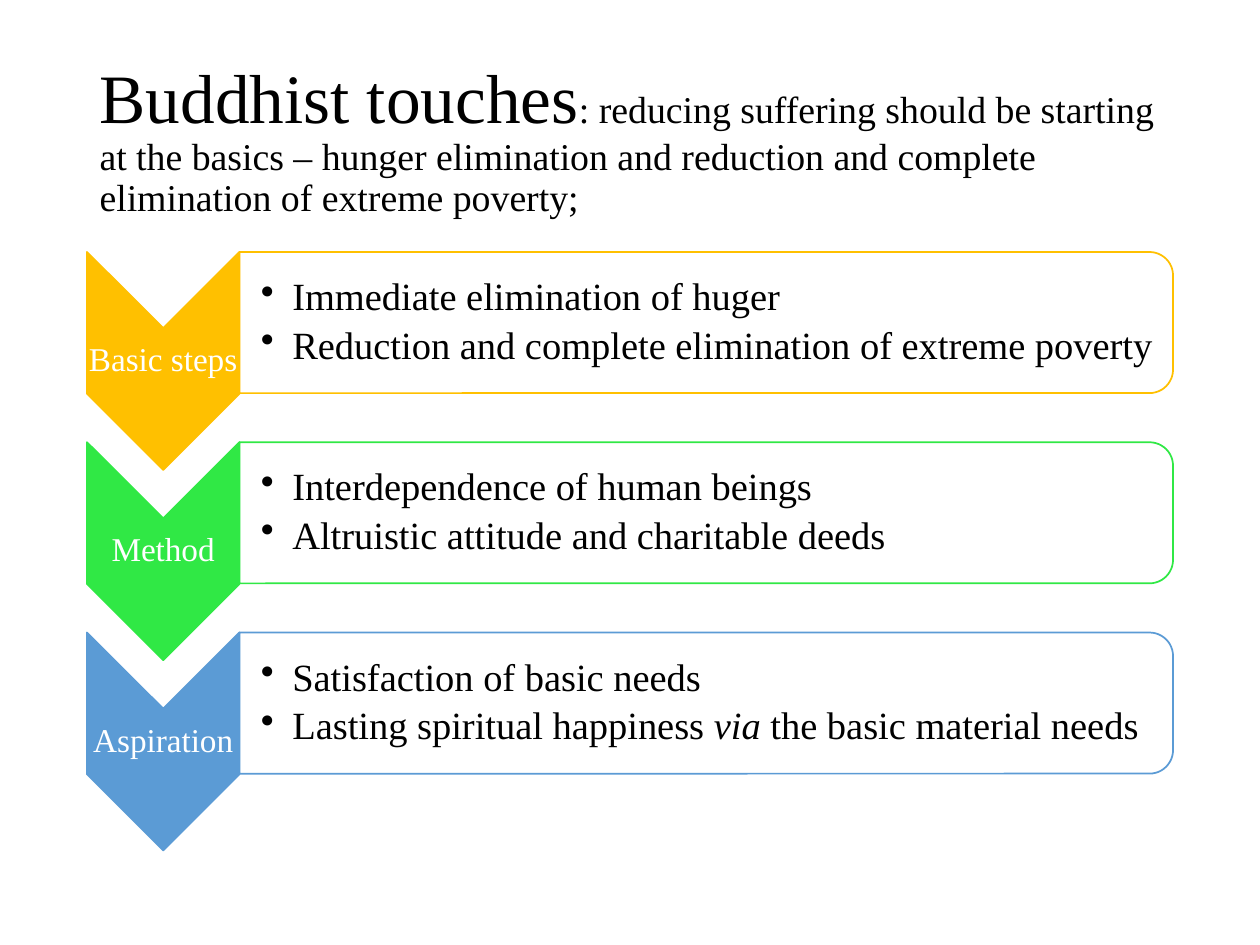
from lxml.etree import SubElement
from pptx import Presentation
from pptx.dml.color import RGBColor
from pptx.enum.shapes import MSO_SHAPE as Shape
from pptx.enum.text import MSO_ANCHOR as Anchor, MSO_AUTO_SIZE as AutoSize, PP_ALIGN as Align
from pptx.oxml.ns import qn
from pptx.util import Inches, Pt

WIDTH, HEIGHT = 10, 7.5
LEFT, TOP, ROW_WIDTH, ROW_PITCH = 0.69, 2.0, 8.62, 1.51
CHEVRON_WIDTH, CHEVRON_HEIGHT, PANEL_HEIGHT = 1.21, 1.73, 1.12
TITLE = [("Buddhist touches", {"size": Pt(39.6)}),
         (": reducing suffering should be starting at the basics – hunger elimination "
          "and reduction and complete elimination of extreme poverty;", {"size": Pt(21.6)})]
BODY = {"size": Pt(22)}
STEPS = [
    ("Basic steps", "FFC000", [
        [("Immediate elimination of huger", BODY)],
        [("Reduction and complete elimination of extreme poverty", BODY)]]),
    ("Method", "30E845", [
        [("Interdependence of human beings", BODY)],
        [("Altruistic attitude and charitable deeds", BODY)]]),
    ("Aspiration", "5B9BD5", [
        [("Satisfaction of basic needs", BODY)],
        [("Lasting spiritual happiness ", BODY), ("via", {**BODY, "italic": True}),
         (" the basic material needs", BODY)]]),
]


def color(value):
    return RGBColor.from_string(value)


def apply(target, values):
    for name, value in values.items():
        setattr(target, name, value)


def write(frame, paragraphs, text_color, align=Align.LEFT, margins=None, bullet=False):
    """Fill a text frame with paragraphs, each a list of (text, font values)."""
    apply(frame, {"word_wrap": True, "auto_size": AutoSize.NONE,
                  "vertical_anchor": Anchor.MIDDLE})
    if margins:
        names = ("margin_left", "margin_top", "margin_right", "margin_bottom")
        apply(frame, dict(zip(names, map(Inches, margins))))
    for index, runs in enumerate(paragraphs):
        paragraph = frame.add_paragraph() if index else frame.paragraphs[0]
        apply(paragraph, {"alignment": align, "line_spacing": 0.9})
        if bullet:
            paragraph.space_after = Pt(4)
            properties = paragraph._p.get_or_add_pPr()
            properties.set("marL", str(Inches(0.25)))
            properties.set("indent", str(-Inches(0.25)))
            SubElement(properties, qn("a:buChar")).set("char", "•")
        for text, values in runs:
            run = paragraph.add_run()
            run.text = text
            apply(run.font, {"name": "Times New Roman", **values})
            run.font.color.rgb = color(text_color)


def add_turned_shape(shapes, kind, box, fill, line):
    """Add a shape turned by 90 degrees that covers the given box."""
    left, top, width, height = box
    shift = (width - height) / 2
    shape = shapes.add_shape(kind, *map(Inches, (left + shift, top - shift, height, width)))
    shape.rotation = 90
    shape.shadow.inherit = False
    shape.fill.solid()
    shape.fill.fore_color.rgb = color(fill)
    shape.line.color.rgb = color(line)
    shape.line.width = Pt(1)
    return shape


def add_text(shapes, box, paragraphs, text_color, **options):
    frame = shapes.add_textbox(*map(Inches, box)).text_frame
    write(frame, paragraphs, text_color, **options)


def add_title(slide, box):
    title = slide.shapes.title
    apply(title, dict(zip(("left", "top", "width", "height"), map(Inches, box))))
    write(title.text_frame, [TITLE], "000000")


def add_step(shapes, box, label, accent, points):
    """One row: a downward chevron with its label, and a rounded panel of points."""
    left, top, width, height = box
    panel_left, panel_width = left + CHEVRON_WIDTH, width - CHEVRON_WIDTH

    # Chevron and label
    add_turned_shape(shapes, Shape.CHEVRON, (left, top, CHEVRON_WIDTH, height), accent, accent)
    add_text(shapes, (left, top + height * 0.35, CHEVRON_WIDTH, height * 0.3),
             [[(label, {"size": Pt(19)})]], "FFFFFF", align=Align.CENTER, margins=[0.01] * 4)

    # Panel and points
    panel = add_turned_shape(shapes, Shape.ROUND_2_SAME_RECTANGLE,
                             (panel_left, top, panel_width, PANEL_HEIGHT), "FFFFFF", accent)
    fill = panel._element.spPr.find(qn("a:solidFill"))
    SubElement(fill[0], qn("a:alpha")).set("val", "90000")
    inset = PANEL_HEIGHT * 0.05
    add_text(shapes, (panel_left, top + inset, panel_width - inset, PANEL_HEIGHT - 2 * inset),
             points, "000000", margins=(0.17, 0.02, 0.02, 0.02), bullet=True)


def main():
    presentation = Presentation()
    apply(presentation, {"slide_width": Inches(WIDTH), "slide_height": Inches(HEIGHT)})
    slide = presentation.slides.add_slide(presentation.slide_layouts[5])
    add_title(slide, (LEFT, 0.4, ROW_WIDTH, 1.45))
    steps = slide.shapes.add_group_shape()
    for row, step in enumerate(STEPS):
        add_step(steps.shapes, (LEFT, TOP + row * ROW_PITCH, ROW_WIDTH, CHEVRON_HEIGHT), *step)
    presentation.save("out.pptx")


if __name__ == "__main__":
    main()
